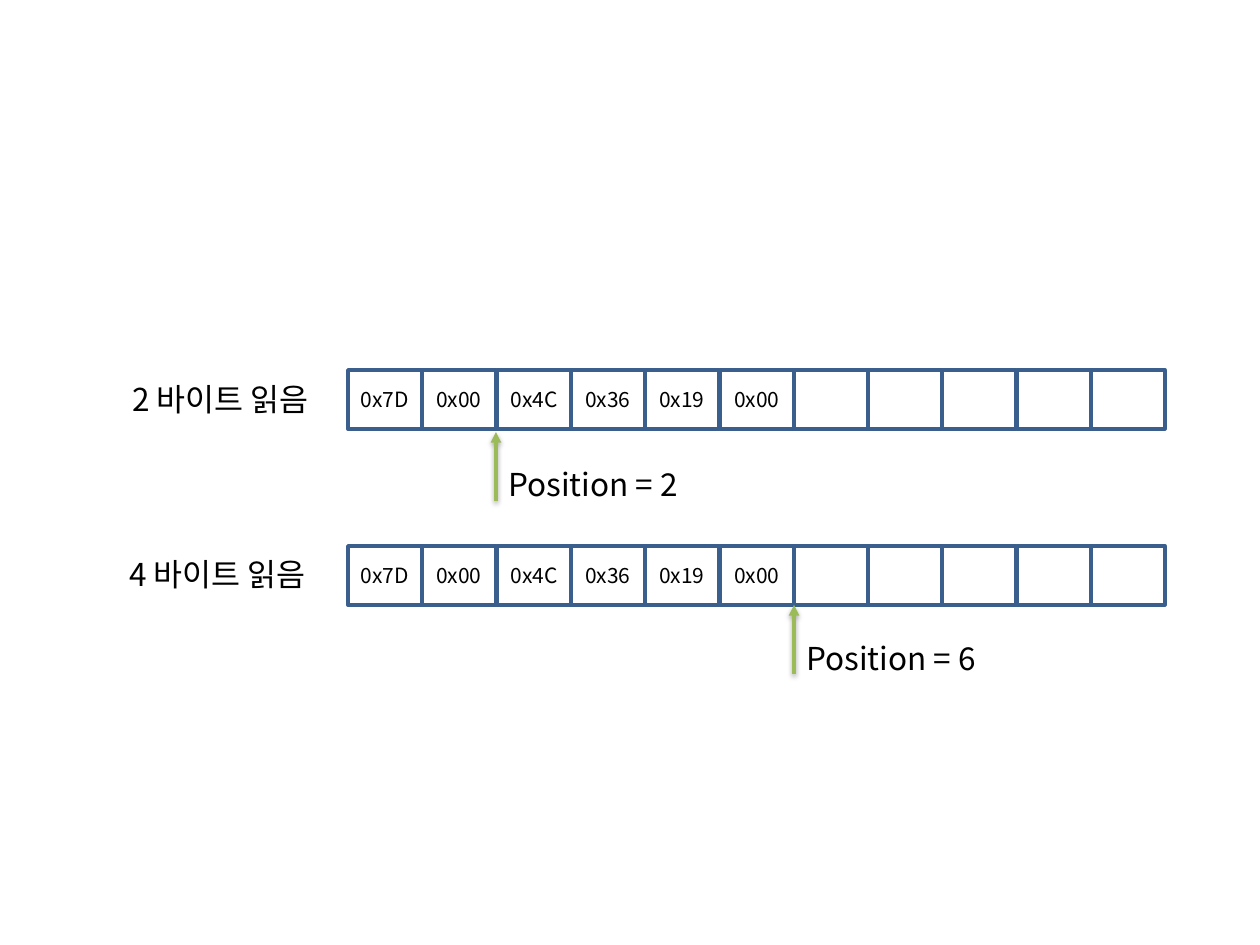
from lxml import etree
from pptx import Presentation
from pptx import util as u
from pptx.dml.color import RGBColor
from pptx.enum import shapes, text
from pptx.oxml import parse_xml
from pptx.oxml.ns import nsdecls, qn

PX = 914400 / 126
FONT = "Noto Sans CJK KR"
HUES = {"edge": "3A5F8C", "arrow": "9BBB59", "ink": "000000"}


def px(*vals):
    return [u.Emu(round(v * PX)) for v in vals]


def write(shape, words, size):
    run = shape.text_frame.paragraphs[0].add_run()
    run.text = words
    run.font.size = u.Pt(size)
    run.font.name = FONT
    run.font.color.rgb = RGBColor.from_string(HUES["ink"])
    etree.SubElement(run.font._element, qn("a:ea"), typeface=FONT)


deck = Presentation()
deck.slide_width, deck.slide_height = px(1260, 945)
slide = deck.slides.add_slide(deck.slide_layouts[6])
items = slide.shapes

codes = ["0x7D", "0x00", "0x4C", "0x36", "0x19", "0x00"] + [""] * 5
rows = [
    (348, 546, 605, 794, 633, "Position = 6", 117, 549, "4 바이트 읽음"),
    (348, 370, 432, 496, 459, "Position = 2", 120, 374, "2 바이트 읽음"),
]

for left, top, tip, mark, low, place, side, high, label in rows:
    for i, code in enumerate(codes):
        cell = items.add_shape(shapes.MSO_SHAPE.RECTANGLE,
                               *px(left + round(i * 74.3), top, 74, 59))
        cell.shadow.inherit = False
        cell.fill.background()
        cell.line.color.rgb = RGBColor.from_string(HUES["edge"])
        cell.line.width = u.Pt(2)
        if code:
            frame = cell.text_frame
            frame.word_wrap = False
            frame.vertical_anchor = text.MSO_ANCHOR.MIDDLE
            frame.paragraphs[0].alignment = text.PP_ALIGN.CENTER
            write(cell, code, 12)

    arrow = items.add_connector(shapes.MSO_CONNECTOR.STRAIGHT,
                                *px(mark, tip, mark, tip + 69))
    arrow.line.color.rgb = RGBColor.from_string(HUES["arrow"])
    arrow.line.width = u.Pt(2)
    etree.SubElement(arrow.line._get_or_add_ln(), qn("a:headEnd"), type="triangle")
    arrow._element.spPr.append(parse_xml(
        f'<a:effectLst {nsdecls("a")}><a:outerShdw blurRad="{u.Pt(3.1)}" '
        f'dist="{u.Pt(1.6)}" dir="5400000" rotWithShape="0">'
        f'<a:srgbClr val="{HUES["ink"]}"><a:alpha val="38000"/></a:srgbClr>'
        '</a:outerShdw></a:effectLst>'))

    for x, y, wide, words in [(mark, low, 248, place), (side, high, 228, label)]:
        box = items.add_textbox(*px(x, y, wide, 50))
        box.text_frame.word_wrap = True
        box.text_frame.auto_size = text.MSO_AUTO_SIZE.SHAPE_TO_FIT_TEXT
        write(box, words, 18)

deck.save("out.pptx")
